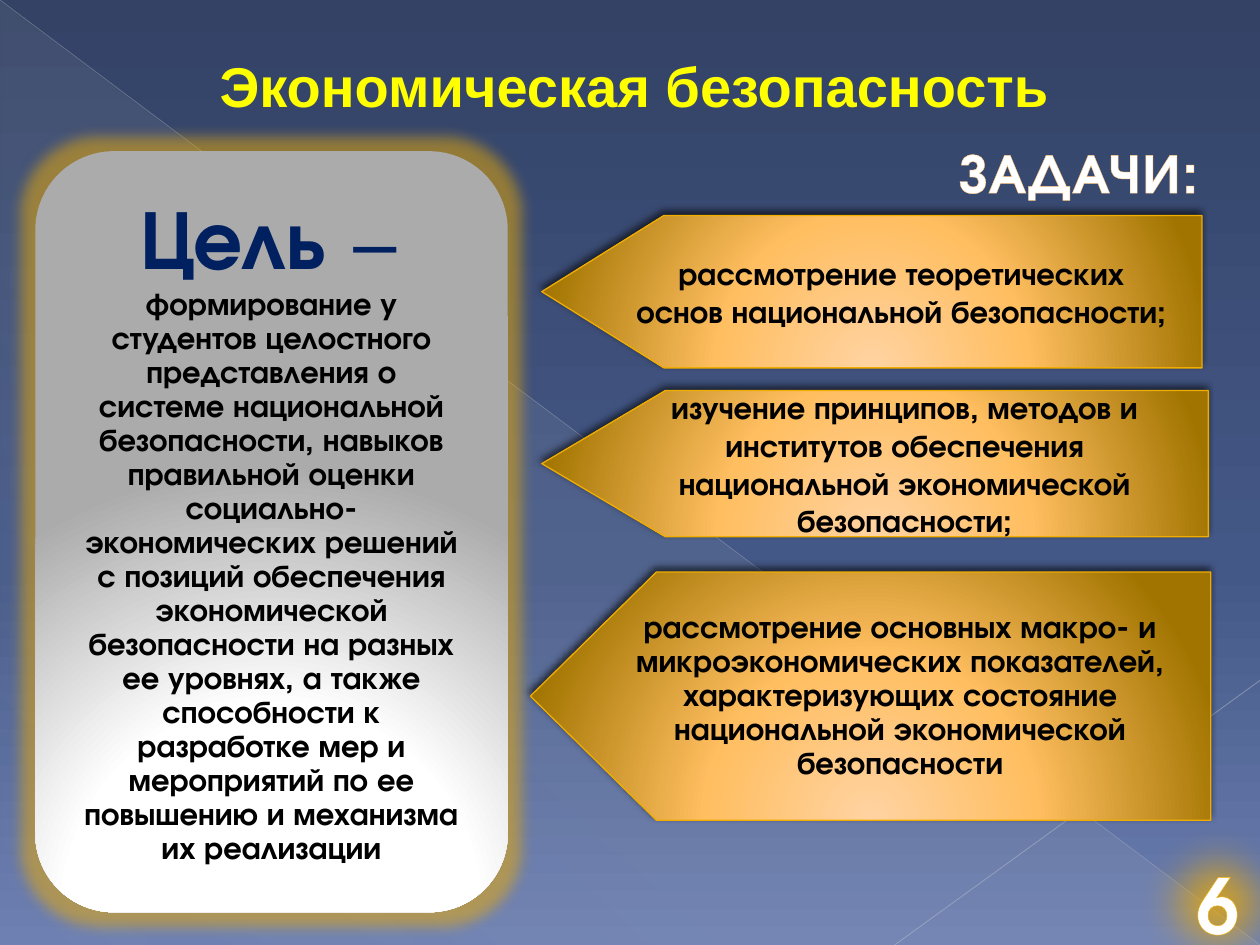
from lxml import etree
from pptx import Presentation, util as u
from pptx.dml.color import RGBColor
from pptx.enum import shapes, text
from pptx.oxml.ns import nsdecls, qn

FONT = "TeX Gyre Adventor"
GOLD = "F0AD00"
GLOSS = [(0, "FFD3A2", 100), (46, "FFBE60", 100), (100, "A17400", 100)]
SILVER = [(0, "FFFFFF", 100), (46, "FFFFFF", 100), (100, "ABABAB", 100)]
SHADOW = ('<a:outerShdw blurRad="50800" dist="38100" dir="14700000">'
          '<a:srgbClr val="000000"><a:alpha val="60000"/></a:srgbClr></a:outerShdw>')
GLOW = (f'<a:glow rad="190500"><a:srgbClr val="{GOLD}">'
        '<a:alpha val="50000"/></a:srgbClr></a:glow>')
SOFT = '<a:softEdge rad="317500"/>'


def paint(props, stops=(), angle=None, line=None, effect=""):
    """Set gradient stops (place, colour, opacity), line (colour, width, opacity) and effect."""
    for child in list(props):
        if child.tag not in (qn("a:xfrm"), qn("a:prstGeom"), qn("a:custGeom")):
            props.remove(child)
    tint = '<a:srgbClr val="{}"><a:alpha val="{}"/></a:srgbClr>'
    parts = []
    if stops:
        marks = "".join(f'<a:gs pos="{place * 1000}">{tint.format(colour, alpha * 1000)}</a:gs>'
                        for place, colour, alpha in stops)
        course = (f'<a:lin ang="{angle * 60000}" scaled="0"/>' if angle is not None else
                  '<a:path path="circle"><a:fillToRect l="50000" t="155000" '
                  'r="50000" b="-55000"/></a:path>')
        parts.append(f'<a:gradFill rotWithShape="1"><a:gsLst>{marks}</a:gsLst>{course}</a:gradFill>')
    if line:
        colour, width, alpha = line
        parts.append(f'<a:ln w="{int(u.Pt(width))}"><a:solidFill>'
                     f'{tint.format(colour, alpha * 1000)}</a:solidFill></a:ln>')
    elif props.tag == qn("p:spPr"):
        parts.append('<a:ln><a:noFill/></a:ln>')
    parts.append(f'<a:effectLst>{effect}</a:effectLst>')
    holder = etree.fromstring(f'<a:holder {nsdecls("a")}>{"".join(parts)}</a:holder>')
    for part in list(holder):
        props.append(part)


def write(para, words, size=18, colour="000000", bold=True, font=FONT,
          align=text.PP_ALIGN.CENTER, outline=None, spread=None):
    """Add a formatted span to a paragraph."""
    para.alignment = align
    span = para.add_run()
    span.text = words
    span.font.size, span.font.bold, span.font.name = u.Pt(size), bold, font
    span.font.color.rgb = RGBColor.from_string(colour)
    marks = span.font._element
    if spread:
        marks.set("spc", str(spread * 100))
    if outline:
        edge, width = outline
        marks.insert(0, etree.fromstring(
            f'<a:ln {nsdecls("a")} w="{int(u.Pt(width))}"><a:solidFill>'
            f'<a:srgbClr val="{edge}"/></a:solidFill></a:ln>'))


deck = Presentation()
deck.slide_width, deck.slide_height = u.Inches(10), u.Inches(7.5)
WIDE, HIGH = deck.slide_width, deck.slide_height
page = deck.slides.add_slide(deck.slide_layouts[5])

# Background with a faint triangle and two rays
page.background.fill.solid()
paint(page.background._cSld.bg.bgPr,
      [(0, "334265", 100), (60, "445887", 100), (100, "6C7FB1", 100)], angle=90)
triangle = page.shapes.add_shape(shapes.MSO_SHAPE.RIGHT_TRIANGLE, 0, 0, WIDE, HIGH)
paint(triangle._element.spPr,
      [(0, "D4D4D6", 10), (70, "D4D4D6", 8), (100, "D4D4D6", 1)], angle=133)
for x1, y1, x2, y2, stroke in [(0, 0, WIDE, HIGH, ("B9BDC8", 0.39, 35)),
                               (WIDE, int(HIGH * 0.72), int(WIDE * 0.71), HIGH,
                                ("C1C4CE", 0.47, 45))]:
    ray = page.shapes.add_connector(shapes.MSO_CONNECTOR.STRAIGHT, x1, y1, x2, y2)
    paint(ray._element.spPr, line=stroke)

# Title
title = page.shapes.title
title.left, title.top = u.Inches(0.35), u.Inches(0.36)
title.width, title.height = u.Inches(9.37), u.Inches(0.63)
title.text_frame.vertical_anchor = text.MSO_ANCHOR.MIDDLE
write(title.text_frame.paragraphs[0], "Экономическая безопасность", size=32,
      colour="FFFF00", font="Arial")

# Goal panel
panel = page.shapes.add_shape(shapes.MSO_SHAPE.ROUNDED_RECTANGLE, u.Inches(0.28),
                              u.Inches(1.2), u.Inches(3.75), u.Inches(6.04))
paint(panel._element.spPr, SILVER, effect=GLOW)
frame = panel.text_frame
frame.margin_left = frame.margin_right = u.Inches(0.18)
frame.margin_top = frame.margin_bottom = u.Inches(0.08)
para = frame.paragraphs[0]
para.line_spacing, para.space_after = 0.9, u.Pt(6)
write(para, "Цель", size=48, colour="002060")
write(para, " − ", size=44, colour="002060", bold=False)
write(para, "формирование у студентов целостного представления о системе национальной "
            "безопасности, навыков правильной оценки социально-экономических решений "
            "с позиций обеспечения экономической безопасности на разных ее уровнях, "
            "а также способности к разработке мер и мероприятий по ее повышению "
            "и механизма их реализации")

# Tasks heading
box = page.shapes.add_textbox(u.Inches(7.51), u.Inches(1.04), u.Inches(2.48), u.Inches(0.64))
box.text_frame.word_wrap = True
write(box.text_frame.paragraphs[0], "ЗАДАЧИ:", size=32, colour="FFFFFF",
      align=text.PP_ALIGN.LEFT, outline=("FFC780", 2.48), spread=1)

# Task arrows: tip, shoulder, right edge, top, height, line spacing
tasks = [
    (4.3, 5.27, 9.54, 1.71, 1.21, 1.0,
     "рассмотрение теоретических основ национальной безопасности;"),
    (4.3, 5.28, 9.59, 3.1, 1.16, 1.0,
     "изучение принципов, методов и институтов обеспечения национальной "
     "экономической безопасности;"),
    (4.21, 5.21, 9.61, 4.54, 1.97, 0.9,
     "рассмотрение основных макро- и микроэкономических показателей, "
     "характеризующих состояние национальной экономической безопасности"),
]
for tip, shoulder, right, top, height, spacing, words in tasks:
    bottom = top + height
    corners = [(u.Inches(x), u.Inches(y)) for x, y in
               [(right, bottom), (shoulder, bottom), (tip, top + height / 2),
                (shoulder, top), (right, top)]]
    outline = page.shapes.build_freeform(*corners[0])
    outline.add_line_segments(corners[1:], close=True)
    arrow = outline.convert_to_shape()
    paint(arrow._element.spPr, GLOSS, line=(GOLD, 0.75, 100), effect=SHADOW)
    frame = arrow.text_frame
    frame.word_wrap, frame.vertical_anchor = True, text.MSO_ANCHOR.MIDDLE
    frame.margin_left, frame.margin_right = u.Inches(0.73), u.Inches(0.26)
    frame.margin_top = frame.margin_bottom = u.Inches(0.14)
    para = frame.paragraphs[0]
    para.line_spacing = spacing
    if spacing < 1:
        para.space_after = u.Pt(6)
    write(para, words)

# Page number on a soft glow
badge = page.shapes.add_shape(shapes.MSO_SHAPE.OVAL, u.Inches(8.88), u.Inches(6.42),
                              u.Inches(1.57), u.Inches(1.5))
paint(badge._element.spPr, [(0, GOLD, 79), (100, GOLD, 79)], angle=0, effect=SOFT)
write(badge.text_frame.paragraphs[0], "6", size=44, colour="FFFFFF", outline=(GOLD, 0.8))

deck.save("out.pptx")
